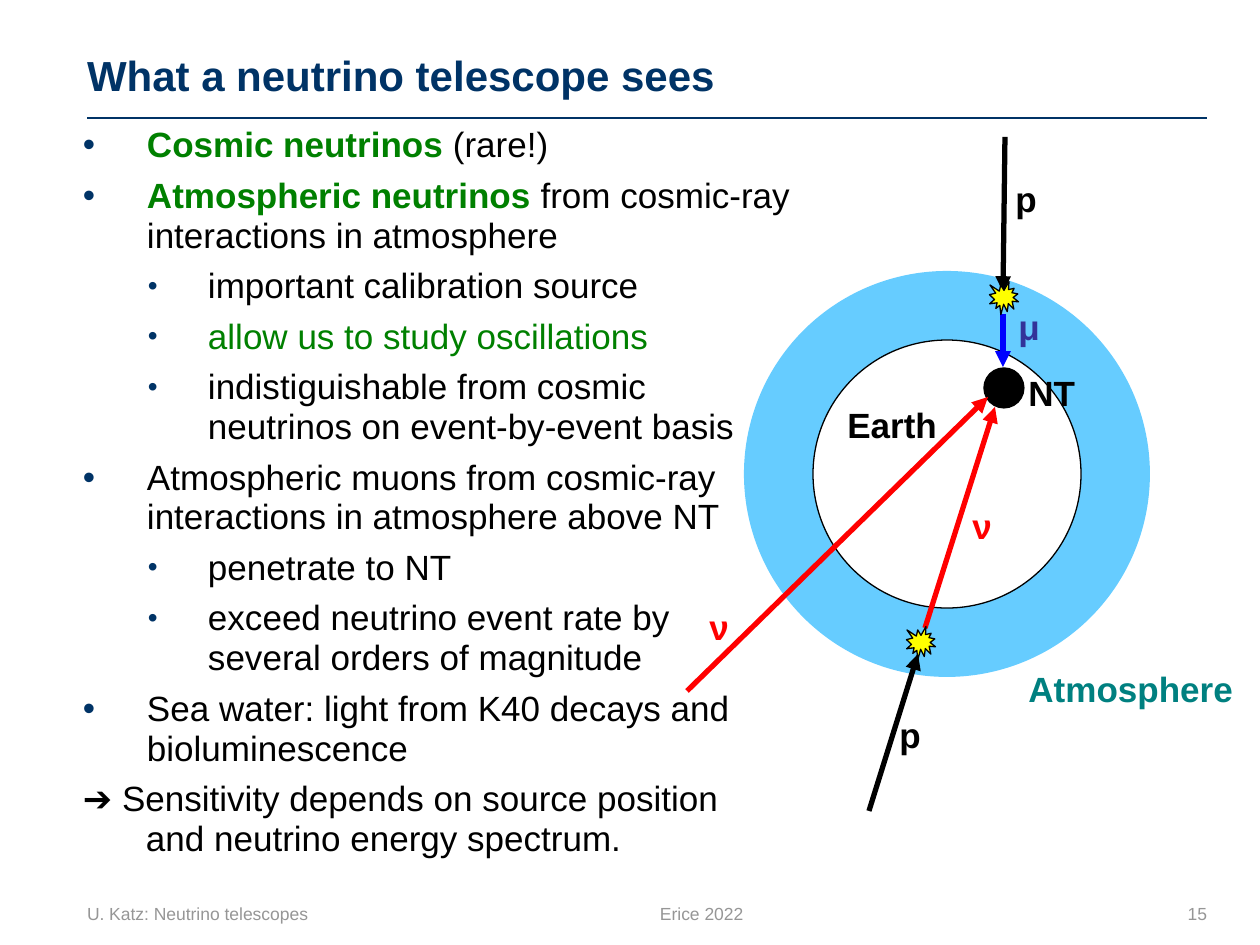
from pptx import Presentation
from pptx.util import Pt
from pptx.dml.color import RGBColor
from pptx.enum.shapes import MSO_SHAPE as Shape, MSO_CONNECTOR as Conn
from pptx.enum.text import MSO_ANCHOR as Anchor, MSO_AUTO_SIZE as Fit, PP_ALIGN as Align
from pptx.oxml.ns import qn
from lxml.etree import SubElement as Sub

# Theme
THEME = dict(
    font="Arial", title=24, body=20, foot=10, thin=0.75, thick=3,
    navy="003366", green="008000", black="000000", white="FFFFFF",
    grey="969696", sky="66CCFF", yellow="FFFF00", red="FF0000",
    blue="0000FF", teal="008080", violet="333399",
)

# Content: (level, [(text, colour, bold), ...]); level None has no bullet
TITLE = "What a neutrino telescope sees"
POINTS = [
    (0, [("Cosmic neutrinos ", "green", True), ("(rare!)", "black", False)]),
    (0, [("Atmospheric neutrinos ", "green", True),
         ("from cosmic-ray interactions in atmosphere", "black", False)]),
    (1, [("important calibration source", "black", False)]),
    (1, [("allow us to study oscillations", "green", False)]),
    (1, [("indistiguishable from cosmic\nneutrinos on event-by-event basis", "black", False)]),
    (0, [("Atmospheric muons from cosmic-ray interactions in atmosphere above NT",
          "black", False)]),
    (1, [("penetrate to NT", "black", False)]),
    (1, [("exceed neutrino event rate by\nseveral orders of magnitude", "black", False)]),
    (0, [("Sea water: light from K40 decays and bioluminescence", "black", False)]),
    (None, [("➔ Sensitivity depends on source position\nand neutrino energy spectrum.",
             "black", False)]),
]
# Level: (left margin, hanging indent, bullet size in percent)
INDENT = {0: (64, 64, 100), 1: (125, 60, 80), None: (63, 63, None)}

# Diagram, in px: circles by centre and radius, bursts by centre
CIRCLES = [(947, 474, 203, "sky", None), (947, 474, 134, "white", "black"),
           (1004, 388, 20, "black", "black")]
BURSTS = [(921, 643), (1004, 298)]
BURST = (29, 33)
ARROWS = [
    (869, 811, 918, 654, "black"),
    (925, 628, 995, 407, "red"),
    (687, 691, 988, 397, "red"),
    (1005, 137, 1003, 292, "black"),
    (1003, 314, 1003, 367, "blue"),
]
LABELS = [
    ("p", 887, 707, 47, "black"), ("Atmosphere", 1016, 661, 232, "teal"),
    ("Earth", 835, 397, 116, "black"), ("μ", 1006, 299, 45, "violet"),
    ("ν", 697, 599, 44, "red"), ("p", 1003, 171, 47, "black"),
    ("ν", 960, 498, 44, "red"), ("NT", 1016, 365, 73, "black"),
]
FOOTER = [("U. Katz: Neutrino telescopes", 87, 400, Align.LEFT),
          ("Erice 2022", 660, 200, Align.LEFT),
          ("15", 1145, 62, Align.RIGHT)]

SCALE = 914400 / 126


def px(*vals):
    return [round(v * SCALE) for v in vals]


def tint(name):
    return RGBColor.from_string(THEME[name])


def style(run, size, color, bold=False):
    font = run.font
    font.name, font.size, font.bold = THEME["font"], Pt(THEME[size]), bold
    font.color.rgb = tint(color)


def flush(frame, anchor):
    frame.margin_left = frame.margin_right = 0
    frame.margin_top = frame.margin_bottom = 0
    frame.word_wrap, frame.vertical_anchor = True, anchor


def add_form(kind, box, fill, line=None):
    form = slide.shapes.add_shape(kind, *px(*box))
    form.shadow.inherit = False
    form.fill.solid()
    form.fill.fore_color.rgb = tint(fill)
    if line:
        form.line.color.rgb = tint(line)
        form.line.width = Pt(THEME["thin"])
    else:
        form.line.fill.background()
    return form


def add_line(ends, color, width, head=False):
    link = slide.shapes.add_connector(Conn.STRAIGHT, *px(*ends))
    link.line.color.rgb = tint(color)
    link.line.width = Pt(THEME[width])
    if head:
        Sub(link.line._get_or_add_ln(), qn("a:tailEnd"), type="triangle")
    Sub(link._element.spPr, qn("a:effectLst"))


def add_text(text, box, size, color, bold=False):
    frame = slide.shapes.add_textbox(*px(*box)).text_frame
    frame.text = text
    style(frame.paragraphs[0].runs[0], size, color, bold)
    return frame


def indent(para, level):
    left, hang, size = INDENT[level]
    props = para._p.get_or_add_pPr()
    props.set("marL", str(px(left)[0]))
    props.set("indent", str(px(-hang)[0]))
    if level is None:
        Sub(props, qn("a:buNone"))
        return
    para.level = level
    Sub(Sub(props, qn("a:buClr")), qn("a:srgbClr"), val=THEME["navy"])
    Sub(props, qn("a:buSzPct"), val=str(size * 1000))
    Sub(props, qn("a:buFont"), typeface=THEME["font"])
    Sub(props, qn("a:buChar"), char="•")


deck = Presentation()
deck.slide_width, deck.slide_height = px(1260, 945)
slide = deck.slides.add_slide(deck.slide_layouts[5])

# Title and rule
title = slide.shapes.title
title.left, title.top, title.width, title.height = px(87, 32, 1102, 68)
head = title.text_frame
head.text = TITLE
flush(head, Anchor.BOTTOM)
head.auto_size = Fit.NONE
head.paragraphs[0].alignment = Align.LEFT
head.paragraphs[0].line_spacing = Pt(28)
style(head.paragraphs[0].runs[0], "title", "navy", True)
add_line((1207, 118, 87, 118), "navy", "thin")

# Bullet list
body = add_form(Shape.RECTANGLE, (83, 126, 711, 738), "white", "white").text_frame
flush(body, Anchor.TOP)
for i, (level, parts) in enumerate(POINTS):
    para = body.add_paragraph() if i else body.paragraphs[0]
    para.text = parts[0][0]
    for text, *_ in parts[1:]:
        para.add_run().text = text
    looks = [part[1:] for part in parts]
    for j, run in enumerate(para.runs):
        style(run, "body", *looks[min(j, len(looks) - 1)])
    indent(para, level)
    para.alignment, para.line_spacing = Align.LEFT, 0.95
    para.space_before, para.space_after = Pt(3 if i else 0), Pt(3)

# Earth, atmosphere and telescope
for x, y, r, fill, line in CIRCLES:
    add_form(Shape.OVAL, (x - r, y - r, 2 * r, 2 * r), fill, line)

# Particle tracks and interactions
for *ends, color in ARROWS:
    add_line(ends, color, "thick", head=True)
wide, high = BURST
for x, y in BURSTS:
    add_form(Shape.EXPLOSION1, (x - wide / 2, y - high / 2, wide, high), "yellow", "black")

# Labels
for text, x, y, w, color in LABELS:
    frame = add_text(text, (x, y, w, 55), "body", color, True)
    frame.word_wrap, frame.auto_size = False, Fit.SHAPE_TO_FIT_TEXT

# Footer
for text, x, w, align in FOOTER:
    frame = add_text(text, (x, 883, w, 62), "foot", "grey")
    flush(frame, Anchor.MIDDLE)
    frame.paragraphs[0].alignment = align

deck.save("out.pptx")
